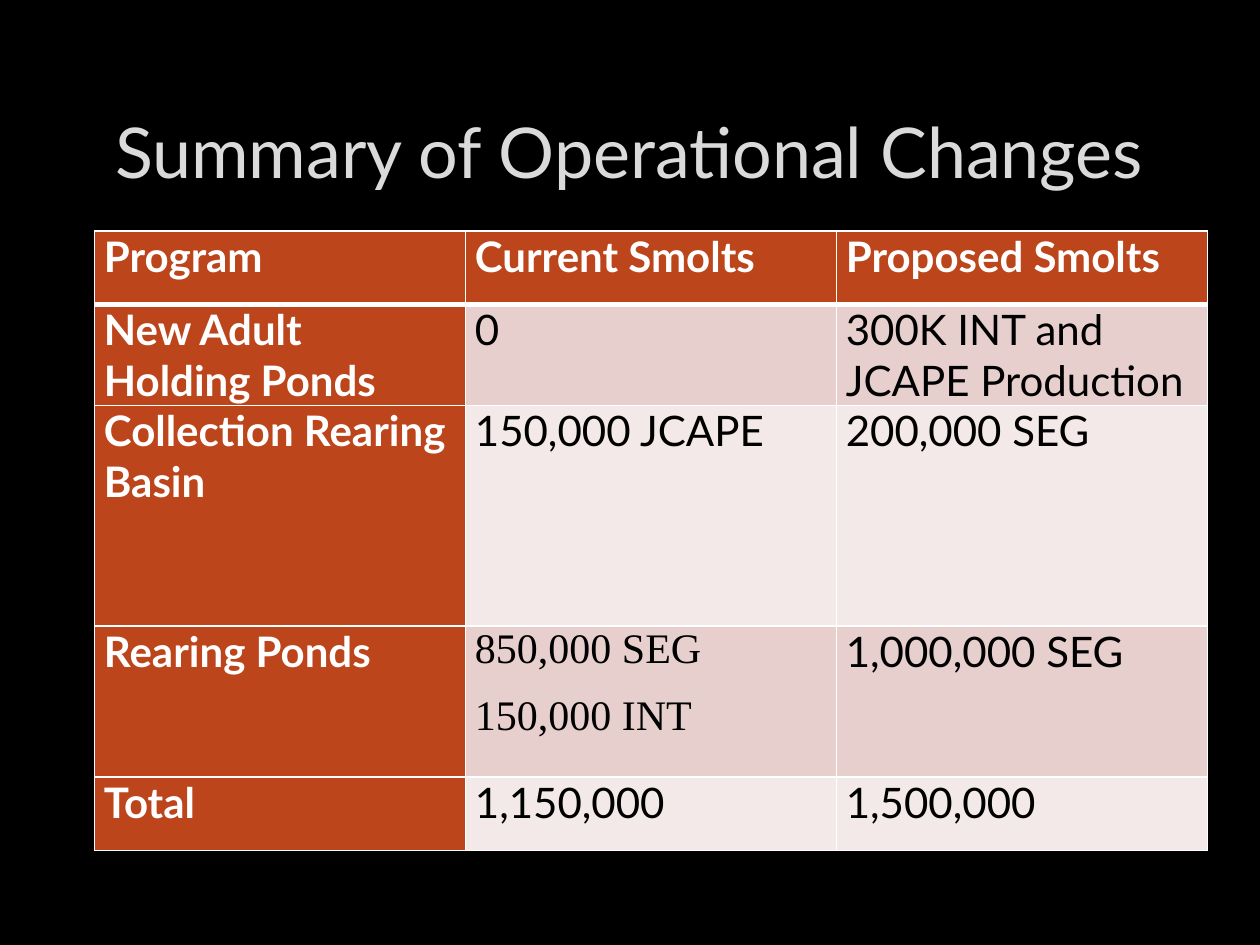
from dataclasses import dataclass
from lxml.etree import SubElement
from pptx import Presentation
from pptx.dml.color import RGBColor
from pptx.enum.text import MSO_ANCHOR, PP_ALIGN
from pptx.oxml.ns import qn
from pptx.util import Pt


@dataclass(frozen=True)
class Theme:
    back: str = "000000"
    title: str = "DADADA"
    edge: str = "404040"
    head: str = "BC451B"
    bands: tuple = ("E7CFCD", "F3E9E8")
    light: str = "FFFFFF"
    dark: str = "000000"
    font: str = "Lato"
    serif: str = "Times New Roman"
    big: int = 40
    body: int = 24


def write(frame, text, *, font, size, color, bold=False, align=PP_ALIGN.LEFT, after=0):
    frame.word_wrap = True
    for i, line in enumerate(text.split("\n")):
        para = frame.paragraphs[0] if i == 0 else frame.add_paragraph()
        para.alignment = align
        para.space_after = Pt(after)
        run = para.add_run()
        run.text = line
        run.font.name = font
        run.font.size = Pt(size)
        run.font.bold = bold
        run.font.color.rgb = RGBColor.from_string(color)


def line(host, tag, color, width, alpha=100):
    item = SubElement(host, qn(tag), w=str(Pt(width)))
    fill = SubElement(item, qn("a:solidFill"))
    tone = SubElement(fill, qn("a:srgbClr"), val=color)
    if alpha < 100:
        SubElement(tone, qn("a:alpha"), val=str(alpha * 1000))
    return item


class Deck:
    """Holds the theme and the current slide."""

    def __init__(self, theme):
        self.theme = theme
        self.file = Presentation()
        self.file.slide_width, self.file.slide_height = Pt(720), Pt(540)
        self.slide = self.file.slides.add_slide(self.file.slide_layouts[5])
        fill = self.slide.background.fill
        fill.solid()
        fill.fore_color.rgb = RGBColor.from_string(theme.back)

    def title(self, text, left, top, width, height):
        look = self.theme
        shape = self.slide.shapes.title
        shape.left, shape.top = Pt(left), Pt(top)
        shape.width, shape.height = Pt(width), Pt(height)
        frame = shape.text_frame
        frame.vertical_anchor = MSO_ANCHOR.MIDDLE
        write(frame, text, font=look.font, size=look.big, color=look.title,
              align=PP_ALIGN.CENTER)
        props = frame.paragraphs[0].runs[0].font._element
        props.insert(0, line(props, "a:ln", look.edge, 0.75, alpha=10))

    def table(self, rows, left, top, width, heights, serif=()):
        count = len(rows[0])
        grid = self.slide.shapes.add_table(
            len(rows), count, Pt(left), Pt(top), Pt(width), Pt(sum(heights))).table
        grid.first_col = True
        for col in grid.columns:
            col.width = Pt(width / count)
        for r, texts in enumerate(rows):
            grid.rows[r].height = Pt(heights[r])
            for c, text in enumerate(texts):
                self.cell(grid.cell(r, c), text, r, c, (r, c) in serif)

    def cell(self, cell, text, r, c, serif):
        look = self.theme
        head = r == 0 or c == 0
        cell.margin_left = cell.margin_right = Pt(5.4)
        cell.margin_top = cell.margin_bottom = 0
        props = cell._tc.get_or_add_tcPr()
        thick = {"L": 1, "R": 1, "T": 3 if r == 1 else 1, "B": 3 if r == 0 else 1}
        for side, width in thick.items():
            line(props, f"a:ln{side}", look.light, width)
        cell.fill.solid()
        tone = look.head if head else look.bands[(r - 1) % 2]
        cell.fill.fore_color.rgb = RGBColor.from_string(tone)
        write(cell.text_frame, text, font=look.serif if serif else look.font,
              size=look.body, color=look.light if head else look.dark,
              bold=head, after=12)

    def save(self):
        self.file.save("out.pptx")


def main():
    deck = Deck(Theme())
    deck.title("Summary of Operational Changes", 54, 48, 611, 76)
    rows = [
        ("Program", "Current Smolts", "Proposed Smolts"),
        ("New Adult Holding Ponds", "0", "300K INT and JCAPE Production"),
        ("Collection Rearing Basin", "150,000 JCAPE", "200,000 SEG"),
        ("Rearing Ponds", "850,000 SEG\n150,000 INT", "1,000,000 SEG"),
        ("Total", "1,150,000", "1,500,000"),
    ]
    deck.table(rows, 54, 132, 636, (42, 42, 126, 86.4, 42), serif={(3, 1)})
    deck.save()


if __name__ == "__main__":
    main()
